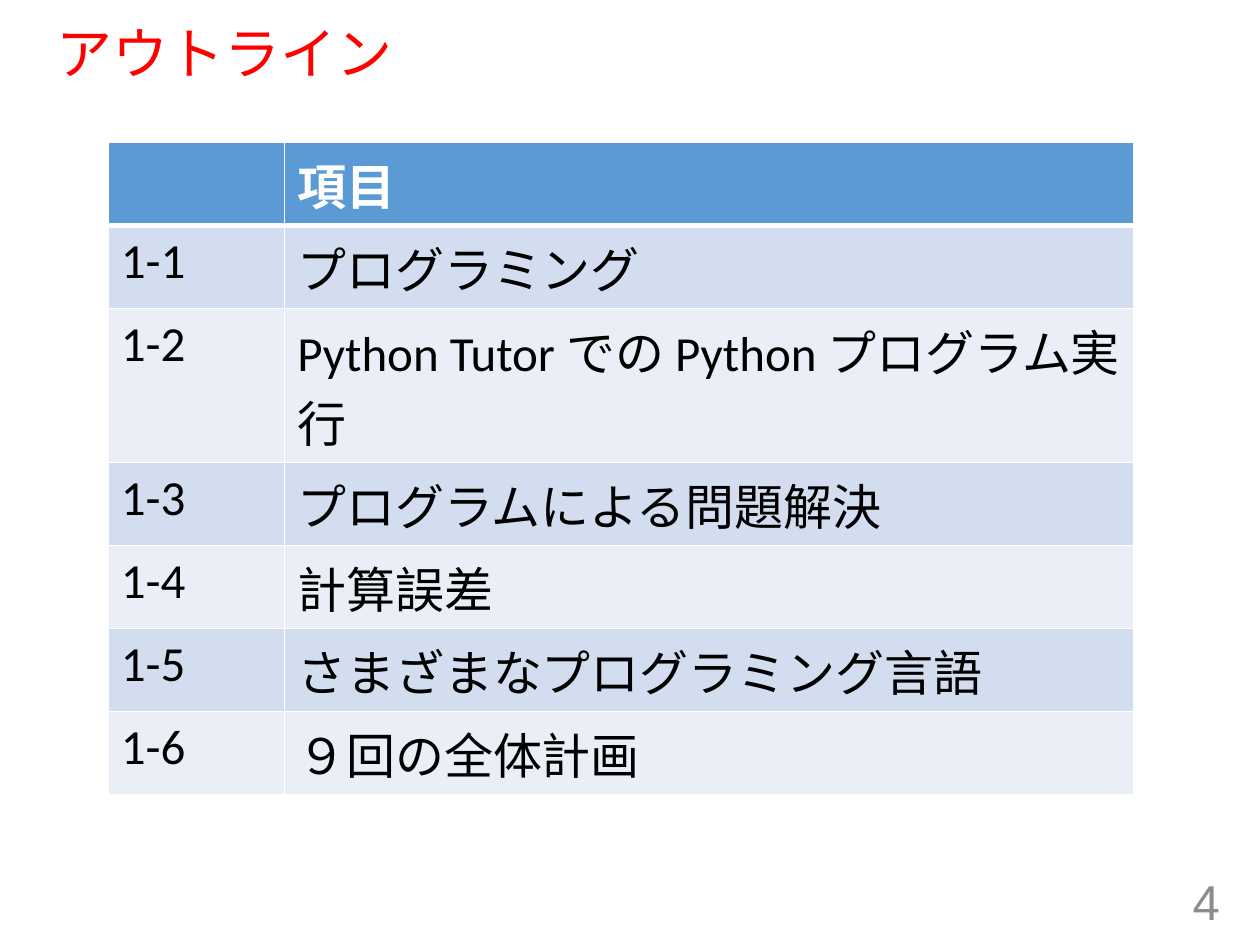
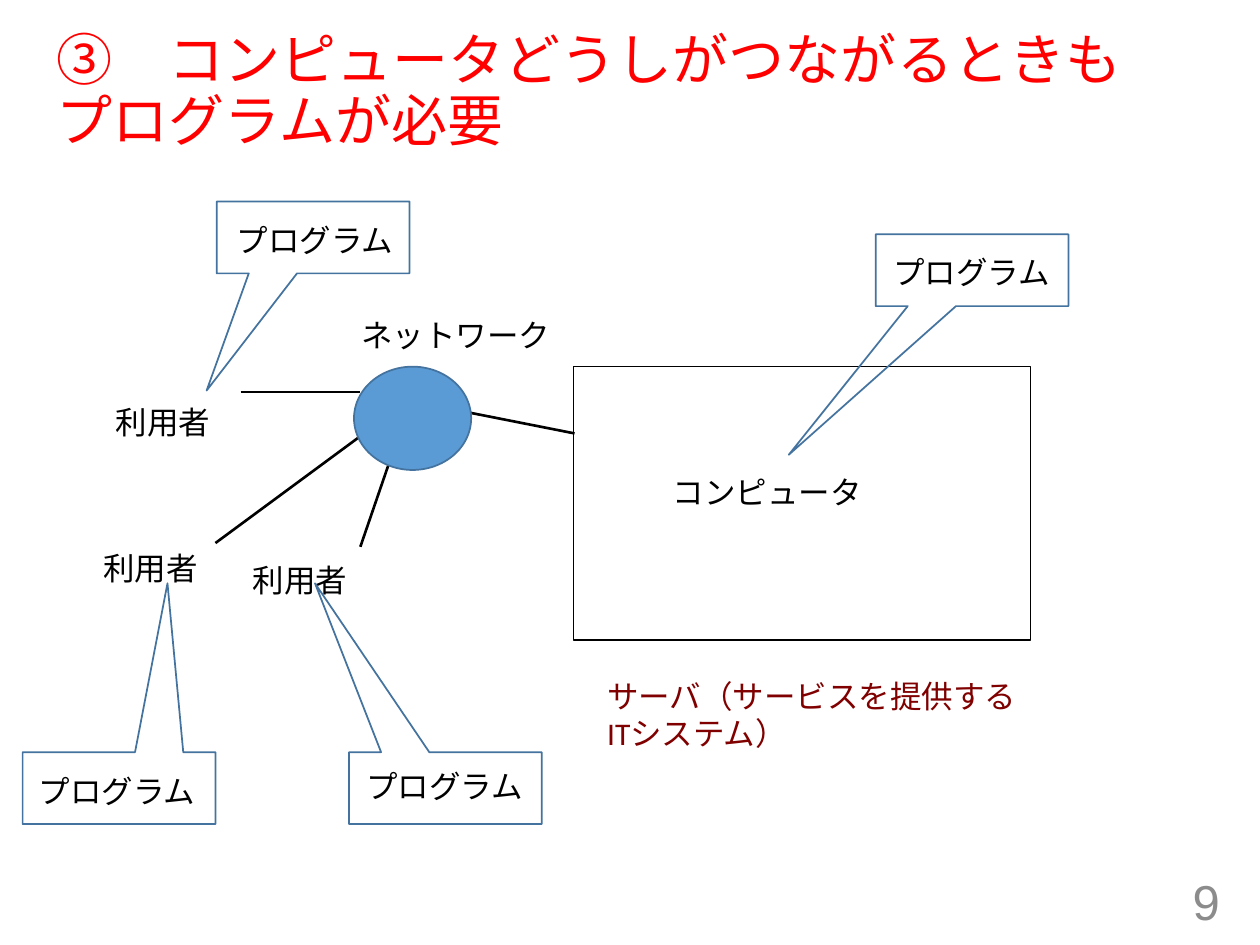
from lxml.etree import SubElement
from pptx import Presentation
from pptx.dml.color import RGBColor
from pptx.enum.shapes import MSO_CONNECTOR, MSO_SHAPE
from pptx.enum.text import MSO_ANCHOR, MSO_AUTO_SIZE, PP_ALIGN
from pptx.oxml.ns import qn
from pptx.util import Inches, Pt

COLORS = {
    "title": "FF0000",
    "page": "8C8C8C",
    "text": "000000",
    "server": "800000",
    "white": "FFFFFF",
    "accent": "5B9BD5",
    "outline": "43739E",
    "band_dark": "D2DEEF",
    "band_light": "EAEFF7",
}
TITLE_ONLY = 5
CALLOUT_WIDTH, CALLOUT_HEIGHT = 1.53, 0.57
ROW_HEIGHT, TWO_LINE_ROW_HEIGHT = 0.66, 1.22
TWO_LINE_ROW = 2

OUTLINE = [
    ("", "項目"),
    ("1-1", "プログラミング"),
    ("1-2", "Python Tutor での Python プログラム実行"),
    ("1-3", "プログラムによる問題解決"),
    ("1-4", "計算誤差"),
    ("1-5", "さまざまなプログラミング言語"),
    ("1-6", "９回の全体計画"),
]
USERS = [(0.82, 3.15), (0.72, 4.31), (1.91, 4.4)]
LINKS = [
    ((1.91, 3.11), (2.86, 3.11)),
    ((1.71, 4.31), (2.89, 3.44)),
    ((2.86, 4.34), (3.09, 3.67)),
    ((3.7, 3.27), (4.56, 3.44)),
]
# Corner of each callout, the point it aims at, and the corner of its label
PROGRAMS = [
    ((6.95, 1.86), (6.26, 3.61), (6.99, 1.99)),
    ((1.72, 1.6), (1.64, 3.1), (1.78, 1.74)),
    ((2.77, 5.97), (2.5, 4.63), (2.81, 6.07)),
    ((0.18, 5.97), (1.33, 4.63), (0.21, 6.11)),
]


def rgb(name):
    return RGBColor.from_string(COLORS[name])


def write(frame, *paragraphs, size=18, font="Calibri", color="text", bold=False,
          align=PP_ALIGN.LEFT, spacing=None):
    """Fill a text frame; a newline inside a paragraph is a line break."""
    for index, content in enumerate(paragraphs):
        paragraph = frame.add_paragraph() if index else frame.paragraphs[0]
        paragraph.text = content
        paragraph.alignment = align
        paragraph.line_spacing = spacing
        for run in paragraph.runs:
            run.font.size = Pt(size)
            run.font.name = font
            run.font.bold = bold
            run.font.color.rgb = rgb(color)


def add_titled_slide(prs, title_text, title_height, page):
    slide = prs.slides.add_slide(prs.slide_layouts[TITLE_ONLY])
    title = slide.shapes.title
    title.left, title.top = Inches(0.35), Inches(0.19)
    title.width, title.height = Inches(9.25), Inches(title_height)
    title.text_frame.auto_size = MSO_AUTO_SIZE.NONE
    title.text_frame.vertical_anchor = MSO_ANCHOR.MIDDLE
    write(title.text_frame, title_text, size=32, font="Arial", color="title", spacing=0.9)

    page_box = slide.shapes.add_textbox(Inches(7.53), Inches(6.95), Inches(2.25), Inches(0.4))
    page_box.text_frame.word_wrap = True
    page_box.text_frame.vertical_anchor = MSO_ANCHOR.MIDDLE
    write(page_box.text_frame, str(page), size=28, font="Arial", color="page",
          align=PP_ALIGN.RIGHT)
    return slide


def add_label(slide, corner, width, height, *paragraphs, **text_format):
    left, top = corner
    label = slide.shapes.add_textbox(Inches(left), Inches(top), Inches(width), Inches(height))
    label.text_frame.word_wrap = False
    label.text_frame.auto_size = MSO_AUTO_SIZE.SHAPE_TO_FIT_TEXT
    write(label.text_frame, *paragraphs, **text_format)


def add_figure(slide, preset, corner, width, height, fill=None, line="outline", weight=1):
    left, top = corner
    figure = slide.shapes.add_shape(preset, Inches(left), Inches(top),
                                    Inches(width), Inches(height))
    figure.shadow.inherit = False
    if fill:
        figure.fill.solid()
        figure.fill.fore_color.rgb = rgb(fill)
    else:
        figure.fill.background()
    figure.line.color.rgb = rgb(line)
    figure.line.width = Pt(weight)
    return figure


def add_link(slide, start, end):
    link = slide.shapes.add_connector(MSO_CONNECTOR.STRAIGHT,
                                      *(Inches(value) for value in start + end))
    link.line.color.rgb = rgb("text")
    link.line.width = Pt(1.5)
    SubElement(link._element.spPr, qn("a:effectLst"))


def add_program_callout(slide, corner, tip, label_corner):
    callout = add_figure(slide, MSO_SHAPE.RECTANGULAR_CALLOUT, corner,
                         CALLOUT_WIDTH, CALLOUT_HEIGHT)
    callout.adjustments[0] = (tip[0] - corner[0]) / CALLOUT_WIDTH - 0.5
    callout.adjustments[1] = (tip[1] - corner[1]) / CALLOUT_HEIGHT - 0.5
    add_label(slide, label_corner, 1.46, 0.38, "プログラム", spacing=0.9)


def set_borders(cell, top=1, bottom=1):
    """Draw white cell borders; call before the fill is set."""
    properties = cell._tc.get_or_add_tcPr()
    for tag, weight in (("a:lnL", 1), ("a:lnR", 1), ("a:lnT", top), ("a:lnB", bottom)):
        border = SubElement(properties, qn(tag), w=str(Pt(weight)))
        fill = SubElement(border, qn("a:solidFill"))
        SubElement(fill, qn("a:srgbClr"), val=COLORS["white"])


def add_outline_table(slide):
    table = slide.shapes.add_table(len(OUTLINE), 2, Inches(0.86), Inches(1.13),
                                   Inches(8.14), Inches(5.18)).table
    for column, width in zip(table.columns, (1.4, 6.74)):
        column.width = Inches(width)
    for index, entries in enumerate(OUTLINE):
        header = index == 0
        band = "accent" if header else "band_dark" if index % 2 else "band_light"
        row = table.rows[index]
        row.height = Inches(TWO_LINE_ROW_HEIGHT if index == TWO_LINE_ROW else ROW_HEIGHT)
        for cell, entry in zip(row.cells, entries):
            set_borders(cell, top=3 if index == 1 else 1, bottom=3 if header else 1)
            cell.fill.solid()
            cell.fill.fore_color.rgb = rgb(band)
            write(cell.text_frame, entry, size=28, bold=header,
                  color="white" if header else "text")


def add_network_diagram(slide):
    add_figure(slide, MSO_SHAPE.RECTANGLE, (4.55, 2.91), 3.63, 2.17, line="text", weight=0.75)
    add_label(slide, (5.24, 3.74), 1.72, 0.38, "コンピュータ", spacing=0.9)
    for corner in USERS:
        add_label(slide, corner, 0.96, 0.4, "利用者")
    for start, end in LINKS:
        add_link(slide, start, end)
    add_label(slide, (4.72, 5.32), 3.48, 0.71, "サーバ（サービスを提供する", "ITシステム）",
              color="server")
    add_label(slide, (2.77, 2.49), 1.72, 0.38, "ネットワーク", spacing=0.9)
    for corner, tip, label_corner in PROGRAMS:
        add_program_callout(slide, corner, tip, label_corner)
    add_figure(slide, MSO_SHAPE.OVAL, (2.81, 2.91), 0.93, 0.82, fill="accent")


def main():
    prs = Presentation()
    prs.slide_width, prs.slide_height = Inches(10), Inches(7.5)
    add_outline_table(add_titled_slide(prs, "アウトライン", 0.51, 4))
    add_network_diagram(add_titled_slide(
        prs, "③　コンピュータどうしがつながるときも\nプログラムが必要", 1.09, 9))
    prs.save("out.pptx")


if __name__ == "__main__":
    main()
